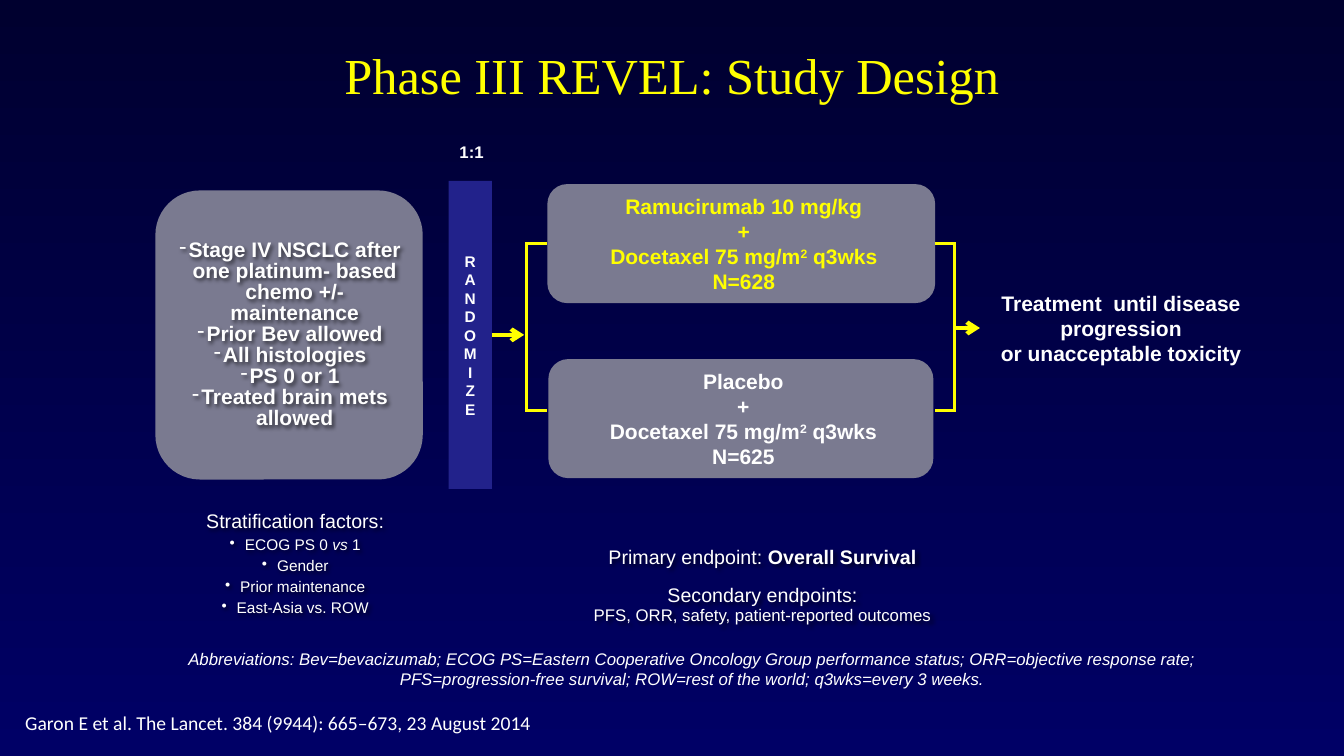
from dataclasses import dataclass

from lxml import etree
from pptx import Presentation
from pptx.dml.color import RGBColor
from pptx.enum import shapes, text
from pptx.oxml import ns
from pptx.util import Pt


@dataclass(frozen=True)
class Theme:
    background_top: str = "00002F"
    background_bottom: str = "000066"
    panel: str = "7A7A90"
    randomize: str = "22228B"
    accent: str = "FFFF00"
    body: str = "FFFFFF"
    font: str = "Arial"
    title_font: str = "Times New Roman"
    citation_font: str = "Calibri"
    title_size: float = 36
    box_size: float = 15
    heading_size: float = 14
    note_size: float = 12
    small_size: float = 11


theme = Theme()
ROUNDED = shapes.MSO_SHAPE.ROUNDED_RECTANGLE
RECTANGLE = shapes.MSO_SHAPE.RECTANGLE

presentation = Presentation()
presentation.slide_width, presentation.slide_height = Pt(960), Pt(540)
slide = presentation.slides.add_slide(presentation.slide_layouts[6])

background = slide.background.fill
background.gradient()
background.gradient_angle = 270
stop_colors = (theme.background_top, theme.background_bottom)
for position, (stop, color) in enumerate(zip(background.gradient_stops, stop_colors)):
    stop.position = position
    stop.color.rgb = RGBColor.from_string(color)


def add_box(kind, bounds, fill=None, margins=(2, 2), middle=True, shadow=False):
    """Add a borderless box; margins are horizontal and vertical."""
    shape = slide.shapes.add_shape(kind, *map(Pt, bounds))
    shape.shadow.inherit = False
    shape.line.fill.background()
    if fill:
        shape.fill.solid()
        shape.fill.fore_color.rgb = RGBColor.from_string(fill)
    else:
        shape.fill.background()
    if shadow:
        effects = shape._element.spPr.find(ns.qn("a:effectLst"))
        outer = etree.SubElement(effects, ns.qn("a:outerShdw"),
                                 blurRad="38100", dist="25400", dir="2700000")
        black = etree.SubElement(outer, ns.qn("a:srgbClr"), val="000000")
        etree.SubElement(black, ns.qn("a:alpha"), val="60000")
    frame = shape.text_frame
    frame.word_wrap = True
    frame.margin_left = frame.margin_right = Pt(margins[0])
    frame.margin_top = frame.margin_bottom = Pt(margins[1])
    anchor = text.MSO_ANCHOR
    frame.vertical_anchor = anchor.MIDDLE if middle else anchor.TOP
    return shape


def write(shape, *runs, size, color=theme.body, font=theme.font, bold=False, italic=False,
          align=text.PP_ALIGN.CENTER, spacing=None, before=0, left=0, bullet=None):
    """Write one paragraph; a run is text or (text, style), style being b, i or sup."""
    frame = shape.text_frame
    paragraph = frame.paragraphs[0] if not frame.text else frame.add_paragraph()
    properties = paragraph._p.get_or_add_pPr()
    properties.set("marL", str(Pt(left)))
    properties.set("indent", str(Pt(-left if bullet else 0)))
    if bullet:
        etree.SubElement(properties, ns.qn("a:buChar"), char=bullet)
    paragraph.alignment = align
    paragraph.space_before = Pt(before)
    if spacing:
        paragraph.line_spacing = spacing
    for item in runs:
        content, style = (item, "") if isinstance(item, str) else item
        run = paragraph.add_run()
        run.text = content
        run.font.name, run.font.size = font, Pt(size)
        run.font.bold = bold or style == "b"
        run.font.italic = italic or style == "i"
        run.font.color.rgb = RGBColor.from_string(color)
        if style == "sup":
            run._r.get_or_add_rPr().set("baseline", "30000")


# Title
title = add_box(RECTANGLE, (48, 8, 864, 90))
write(title, "Phase III REVEL: Study Design", size=theme.title_size,
      color=theme.accent, font=theme.title_font)

# Eligibility
add_box(ROUNDED, (111, 136, 191, 206.5), fill=theme.panel)
eligibility = add_box(ROUNDED, (114, 162, 186.5, 155.5), shadow=True)
for criterion in ("Stage IV NSCLC after one platinum- based chemo +/- maintenance",
                  "Prior Bev allowed", "All histologies", "PS 0 or 1",
                  "Treated brain mets allowed"):
    write(eligibility, criterion, size=theme.box_size, bold=True,
          spacing=Pt(15), left=6.5, bullet="-")

# Randomization
ratio = add_box(RECTANGLE, (312, 99.4, 49.7, 26), margins=(5, 3), middle=False)
write(ratio, "1:1", size=theme.note_size, bold=True, spacing=0.95)
randomize = add_box(RECTANGLE, (320.4, 129.2, 31, 220), fill=theme.randomize, margins=(5, 3))
for letter in "RANDOMIZE":
    write(randomize, letter, size=theme.small_size, bold=True)

# Treatment arms
ARM_HEIGHT = 85
arms = []
for drug, patients, color, left, top, width in (
        ("Ramucirumab 10 mg/kg", "N=628", theme.accent, 391, 131.5, 277),
        ("Placebo", "N=625", theme.body, 391.7, 256.5, 275)):
    arm = add_box(ROUNDED, (left, top, width, ARM_HEIGHT), fill=theme.panel)
    for line in ((drug,), ("+",),
                 ("Docetaxel 75 mg/m", ("2", "sup"), " q3wks"), (patients,)):
        write(arm, *line, size=theme.box_size, color=color, bold=True, left=3.6)
    arms.append(arm)
ramucirumab, placebo = arms

# Treatment duration
duration = add_box(ROUNDED, (700, 199.3, 198, 70), margins=(2, 4))
for line in ("Treatment  until disease progression", "or unacceptable toxicity"):
    write(duration, line, size=theme.box_size, bold=True, left=3.6)

# Brackets and arrows: start, end, width, arrowhead, joined start and end
LEFT_BRACKET, RIGHT_BRACKET = 376.2, 682
UPPER, LOWER = 174, 293
links = [
    ((351.4, 239.2), (374.4, 239.2), 3, True, (randomize, 3), None),
    ((RIGHT_BRACKET, 234.3), (700, 234.3), 3, True, None, (duration, 1)),
]
for bracket, edge, side in ((LEFT_BRACKET, 391, 1), (RIGHT_BRACKET, 668, 3)):
    links += [
        ((bracket, UPPER), (edge, UPPER), 2.25, False, None, (ramucirumab, side)),
        ((bracket, LOWER), (edge, LOWER), 2.25, False, None, None),
        ((bracket, UPPER - 1), (bracket, LOWER + 1), 2.25, False, None, None),
    ]
for start, end, width, arrowhead, source, target in links:
    connector = slide.shapes.add_connector(
        shapes.MSO_CONNECTOR.STRAIGHT, *map(Pt, start + end))
    connector.line.color.rgb = RGBColor.from_string(theme.accent)
    connector.line.width = Pt(width)
    if arrowhead:
        etree.SubElement(connector.line._get_or_add_ln(), ns.qn("a:tailEnd"), type="arrow")
    etree.SubElement(connector._element.spPr, ns.qn("a:effectLst"))
    if source:
        connector.begin_connect(*source)
    if target:
        connector.end_connect(*target)

# Stratification factors
factors = add_box(ROUNDED, (108.7, 344, 204.5, 118), shadow=True)
write(factors, "Stratification factors:", size=theme.heading_size, spacing=Pt(15))
for factor in (("ECOG PS 0 ", ("vs", "i"), " 1"), ("Gender",),
               ("Prior maintenance",), ("East-Asia vs. ROW",)):
    write(factors, *factor, size=theme.small_size, spacing=Pt(15), left=10.8, bullet="•")

# Endpoints
endpoints = add_box(ROUNDED, (351.4, 373.7, 386.6, 91.4), shadow=True)
write(endpoints, "Primary endpoint: ", ("Overall Survival", "b"),
      size=theme.heading_size, spacing=Pt(13.5))
write(endpoints, "Secondary endpoints:", size=theme.heading_size, spacing=Pt(13.5), before=13.5)
write(endpoints, "PFS, ORR, safety, patient-reported outcomes",
      size=theme.note_size, spacing=Pt(13.5))

# Abbreviations and citation
abbreviations = add_box(RECTANGLE, (106, 460, 777, 34.6), margins=(5, 3), middle=False)
write(abbreviations, "Abbreviations: Bev=bevacizumab; ECOG PS=Eastern Cooperative Oncology Group "
      "performance status; ORR=objective response rate; PFS=progression-free survival; "
      "ROW=rest of the world; q3wks=every 3 weeks.", size=theme.note_size, italic=True)
citation = add_box(RECTANGLE, (13, 504.7, 379, 22.3), margins=(5, 3), middle=False)
write(citation, "Garon E et al. The Lancet. 384 (9944): 665–673, 23 August 2014",
      size=theme.heading_size, font=theme.citation_font, align=text.PP_ALIGN.LEFT)

presentation.save("out.pptx")
